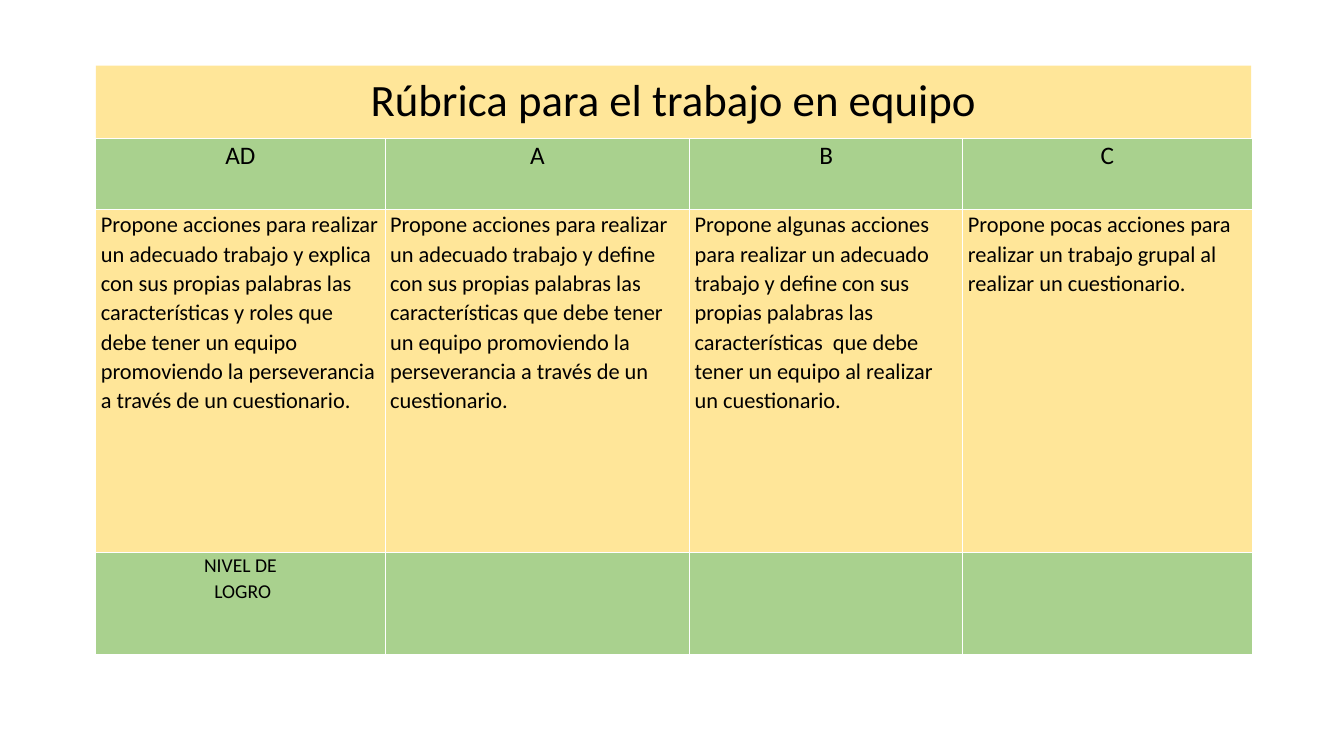
from dataclasses import dataclass

from lxml.etree import SubElement
from pptx import Presentation
from pptx.dml.color import RGBColor
from pptx.enum.text import MSO_ANCHOR as Anchor, PP_ALIGN as Align
from pptx.oxml.ns import qn
from pptx.slide import Slide
from pptx.table import _Cell as Cell
from pptx.text.text import TextFrame
from pptx.util import Inches, Pt

COLORS = {"cream": "FFE699", "green": "A9D18E", "text": "000000", "border": "FFFFFF"}
FONT = "Calibri"
LEFT, TOP, WIDTH, TITLE_HEIGHT = 0.95, 0.65, 11.46, 0.72
COLUMN_WIDTHS = (2.87, 3.02, 2.71, 2.87)
INSETS = {"margin_left": Inches(0.05), "margin_right": Inches(0.05),
          "margin_top": 0, "margin_bottom": 0}


@dataclass
class RubricRow:
    """One row of the rubric with its format."""
    height: float
    fill: str
    size: int
    align: Align
    space_after: int
    texts: tuple[str, ...]


ROWS = (
    RubricRow(0.71, "green", 18, Align.CENTER, 8, ("AD", "A", "B", "C")),
    RubricRow(3.4, "cream", 16, Align.LEFT, 8, (
        "Propone acciones para realizar un adecuado trabajo y explica con sus propias palabras "
        "las características y roles que debe tener un equipo promoviendo la perseverancia "
        "a través de un cuestionario.",
        "Propone acciones para realizar un adecuado trabajo y define con sus propias palabras "
        "las características que debe tener un equipo promoviendo la perseverancia "
        "a través de un cuestionario.",
        "Propone algunas acciones para realizar un adecuado trabajo y define con sus propias "
        "palabras las características  que debe tener un equipo al realizar un cuestionario.",
        "Propone pocas acciones para realizar un trabajo grupal al realizar un cuestionario.",
    )),
    RubricRow(1.01, "green", 14, Align.CENTER, 0, ("NIVEL DE\n LOGRO", "", "", "")),
)


def apply(target: object, values: dict) -> None:
    """Set every attribute given in values."""
    for name, value in values.items():
        setattr(target, name, value)


def write(tf: TextFrame, text: str, size: int, paragraph_format: dict) -> None:
    """Write the text and format its paragraphs and runs."""
    tf.text = text
    for p in tf.paragraphs:
        apply(p, paragraph_format)
        for r in p.runs:
            apply(r.font, {"name": FONT, "size": Pt(size), "bold": False})
            r.font.color.rgb = RGBColor.from_string(COLORS["text"])


def add_borders(cell: Cell) -> None:
    """Draw a thin line on all four sides of a cell."""
    tc_pr = cell._tc.get_or_add_tcPr()
    for side in ("lnL", "lnR", "lnT", "lnB"):
        line = SubElement(tc_pr, qn(f"a:{side}"), w=str(Pt(1)))
        fill = SubElement(line, qn("a:solidFill"))
        SubElement(fill, qn("a:srgbClr"), val=COLORS["border"])


def add_title(s: Slide) -> None:
    """Place and format the title band."""
    sp = s.shapes.title
    apply(sp, {"left": Inches(LEFT), "top": Inches(TOP),
               "width": Inches(WIDTH), "height": Inches(TITLE_HEIGHT)})
    sp.fill.solid()
    sp.fill.fore_color.rgb = RGBColor.from_string(COLORS["cream"])
    tf = sp.text_frame
    apply(tf, {"vertical_anchor": Anchor.MIDDLE, "word_wrap": True})
    write(tf, "Rúbrica para el trabajo en equipo", 32,
          {"alignment": Align.CENTER, "line_spacing": 0.9})


def add_rubric(s: Slide) -> None:
    """Build the rubric table below the title band."""
    height = sum(row.height for row in ROWS)
    table = s.shapes.add_table(len(ROWS), len(COLUMN_WIDTHS), Inches(LEFT),
                               Inches(TOP + TITLE_HEIGHT), Inches(WIDTH), Inches(height)).table
    apply(table, {"first_row": False, "horz_banding": False})
    for column, width in zip(table.columns, COLUMN_WIDTHS):
        column.width = Inches(width)
    for table_row, row in zip(table.rows, ROWS):
        table_row.height = Inches(row.height)
        for cell, text in zip(table_row.cells, row.texts):
            apply(cell, INSETS)
            add_borders(cell)
            cell.fill.solid()
            cell.fill.fore_color.rgb = RGBColor.from_string(COLORS[row.fill])
            write(cell.text_frame, text, row.size,
                  {"alignment": row.align, "line_spacing": 1.07,
                   "space_after": Pt(row.space_after)})


def main() -> None:
    """Build the slide and save it."""
    prs = Presentation()
    apply(prs, {"slide_width": Inches(13.33), "slide_height": Inches(7.5)})
    s = prs.slides.add_slide(prs.slide_layouts[5])
    add_title(s)
    add_rubric(s)
    prs.save("out.pptx")


if __name__ == "__main__":
    main()
